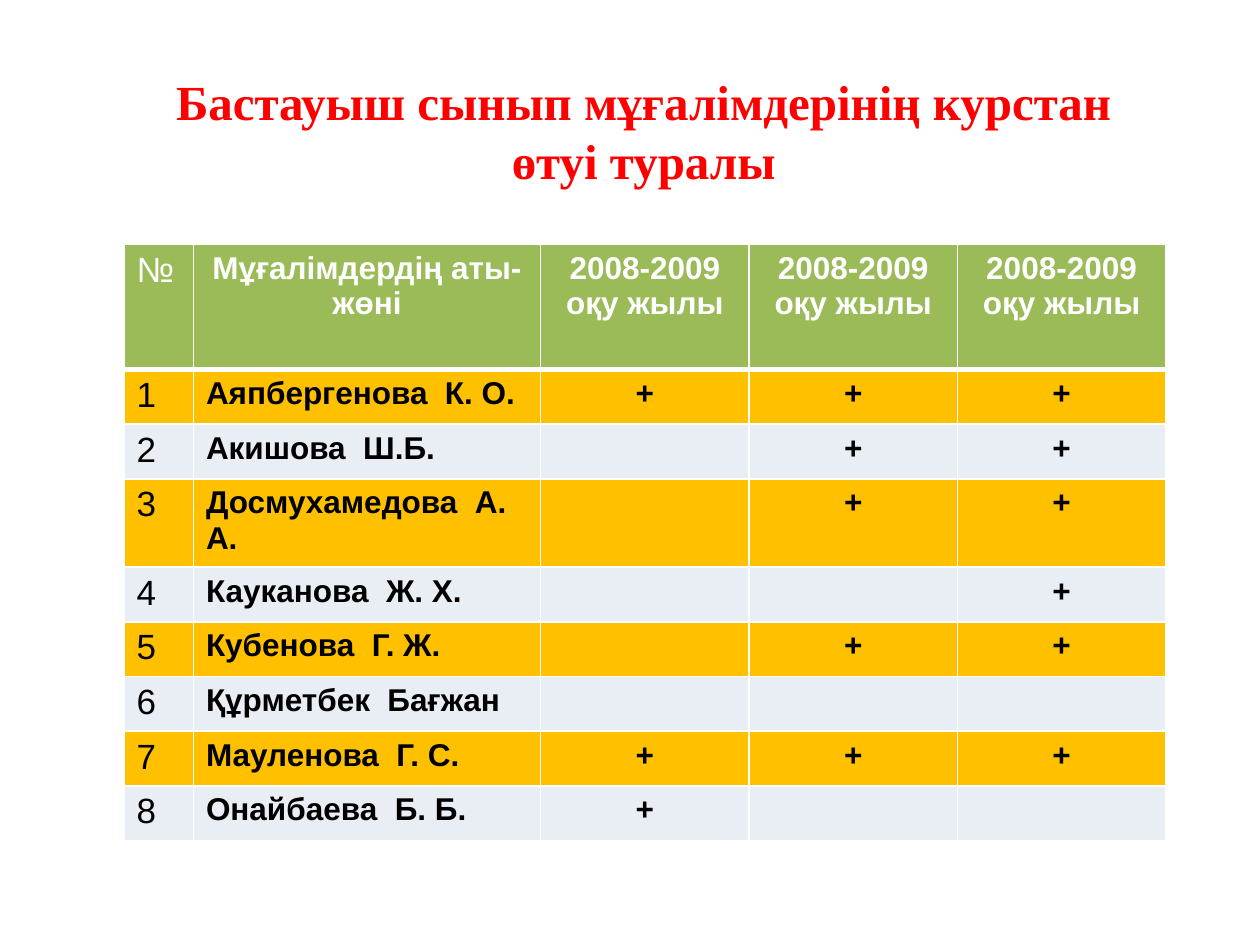
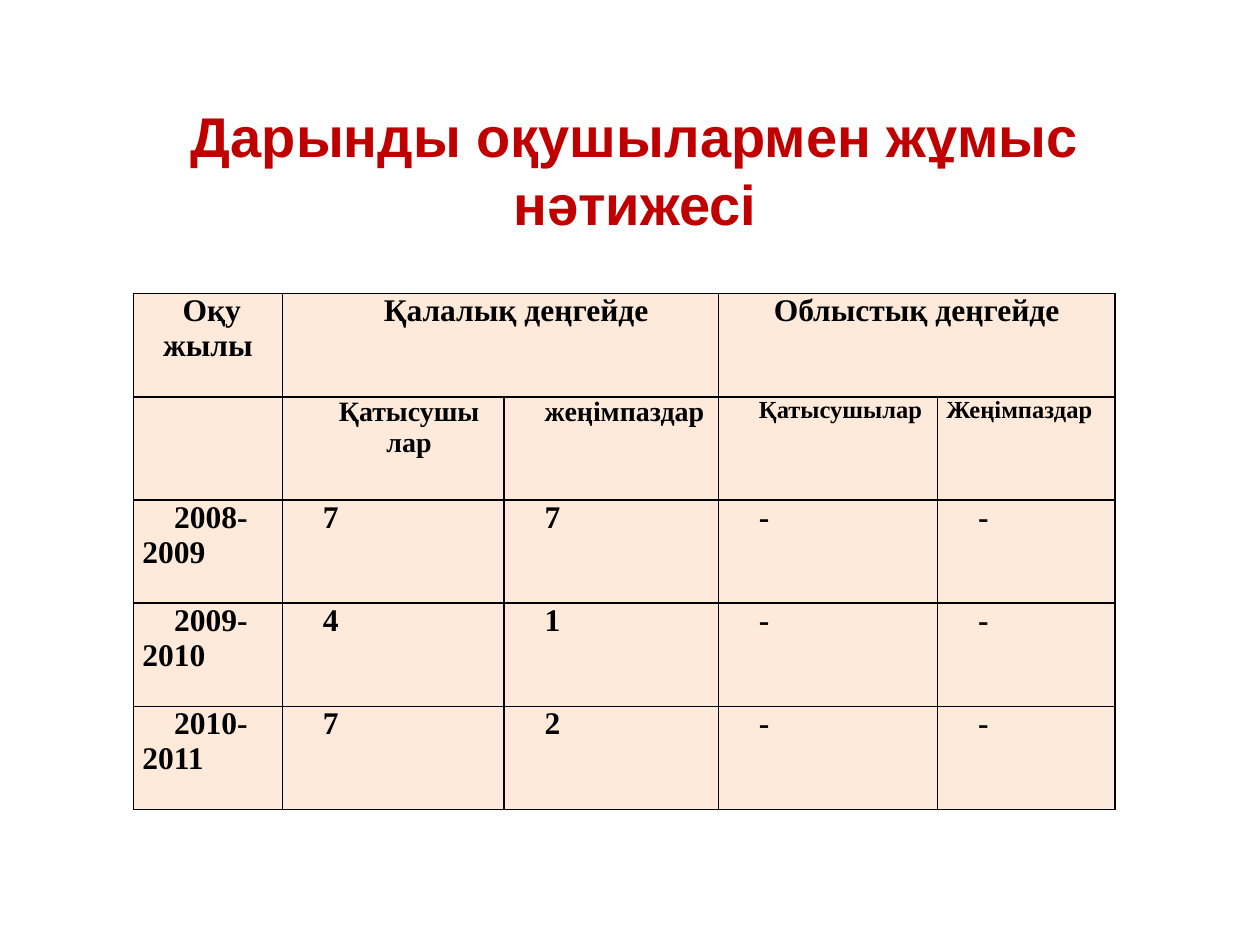
from lxml import etree
from pptx import Presentation
from pptx import util as u
from pptx.dml.color import RGBColor
from pptx.enum import text
from pptx.oxml.ns import qn

COLORS = {
    "red": "FF0000", "dark_red": "C00000", "white": "FFFFFF", "black": "000000",
    "green": "9BBB59", "amber": "FFC000", "pale_blue": "E9EDF4", "peach": "FDEADA",
}
SANS, SERIF = "Arial", "Times New Roman"
LEFT, CENTER, JUSTIFY = (text.PP_ALIGN.LEFT, text.PP_ALIGN.CENTER,
                         text.PP_ALIGN.JUSTIFY)

TEACHERS = [  # name, courses attended in each of the three years
    ("Аяпбергенова  К. О.", "+", "+", "+"),
    ("Акишова  Ш.Б.", "", "+", "+"),
    ("Досмухамедова  А. А.", "", "+", "+"),
    ("Кауканова  Ж. Х.", "", "", "+"),
    ("Кубенова  Г. Ж.", "", "+", "+"),
    ("Құрметбек  Бағжан", "", "", ""),
    ("Мауленова  Г. С.", "+", "+", "+"),
    ("Онайбаева  Б. Б.", "+", "", ""),
]
RESULTS = [
    ("2008-2009", "7", "7", "-", "-"),
    ("2009-2010", "4", "1", "-", "-"),
    ("2010-2011", "7", "2", "-", "-"),
]


def rgb(name):
    return RGBColor.from_string(COLORS[name])


def write(tf, content, size, font, color, bold=True, align=CENTER, indent=0):
    """Fill a text frame; each line of content becomes a paragraph."""
    tf.text = content
    for p in tf.paragraphs:
        p.alignment = align
        if indent:
            p._p.get_or_add_pPr().set("indent", str(u.Cm(indent)))
        for r in p.runs:
            r.font.size, r.font.name, r.font.bold = u.Pt(size), font, bold
            r.font.color.rgb = rgb(color)


def add_title(s, box, content, size, font, color):
    tf = s.shapes.add_textbox(*map(u.Cm, box)).text_frame
    tf.word_wrap = True
    write(tf, content, size, font, color)


def add_grid(s, left, top, widths, heights):
    """Add an unstyled table with the given column widths and row heights."""
    size = map(u.Cm, (left, top, sum(widths), sum(heights)))
    table = s.shapes.add_table(len(heights), len(widths), *size).table
    table.first_row = table.horz_banding = False
    for col, width in zip(table.columns, widths):
        col.width = u.Cm(width)
    for row, height in zip(table.rows, heights):
        row.height = u.Cm(height)
    return table


def style_cell(cell, fill, line, top=1, bottom=1):
    """Draw the four borders of a cell, then its fill."""
    tcPr = cell._tc.get_or_add_tcPr()
    for side, width in zip("LRTB", (1, 1, top, bottom)):
        ln = etree.SubElement(tcPr, qn(f"a:ln{side}"), w=str(u.Pt(width)))
        solid = etree.SubElement(ln, qn("a:solidFill"))
        etree.SubElement(solid, qn("a:srgbClr"), val=COLORS[line])
    cell.fill.solid()
    cell.fill.fore_color.rgb = rgb(fill)


def add_courses_slide(prs):
    s = prs.slides.add_slide(prs.slide_layouts[6])
    add_title(s, (1.9, 1.32, 22.4, 3.84),
              "Бастауыш сынып мұғалімдерінің курстан \nөтуі туралы ",
              28, SERIF, "red")

    # Header, numbered teachers; the longest name takes two lines
    header = ("№", "Мұғалімдердің аты-жөні") + ("2008-2009\nоқу жылы",) * 3
    rows = [header] + [(str(i), *t) for i, t in enumerate(TEACHERS, 1)]
    heights = [2.52] + [1.1] * len(TEACHERS)
    heights[3] = 1.78
    table = add_grid(s, 2.5, 4.93, [1.4, 7] + [4.2] * 3, heights)

    for i, row in enumerate(rows):
        fill = "green" if i == 0 else "amber" if i % 2 else "pale_blue"
        for j, content in enumerate(row):
            cell = table.cell(i, j)
            style_cell(cell, fill, "white", top=3 if i == 1 else 1,
                       bottom=3 if i == 0 else 1)
            write(cell.text_frame, content, 18 if j else 20, SANS,
                  "black" if i else "white", bold=j > 0,
                  align=LEFT if j == 0 or (i and j == 1) else CENTER)


def add_results_slide(prs):
    s = prs.slides.add_slide(prs.slide_layouts[6])
    table = add_grid(s, 2.69, 5.92, [3, 4.47, 4.32, 4.42, 3.58], [2.08] * 5)
    for cell in table.iter_cells():
        style_cell(cell, "peach", "black")
        cell.margin_left = cell.margin_right = u.Cm(0.18)
        cell.margin_top = cell.margin_bottom = 0
    for col in (1, 3):
        table.cell(0, col).merge(table.cell(0, col + 1))

    # Two header rows: column, text, size, alignment, first-line indent
    indent = 0.64
    headers = [
        [(0, " Оқу жылы", 18, CENTER, 0),
         (1, "Қалалық деңгейде", 18, CENTER, indent),
         (3, "Облыстық деңгейде", 18, CENTER, 0)],
        [(1, "Қатысушы\nлар", 16, CENTER, indent),
         (2, "жеңімпаздар", 16, JUSTIFY, indent),
         (3, "Қатысушылар", 14, JUSTIFY, indent),
         (4, "Жеңімпаздар", 14, JUSTIFY, 0)],
    ]
    body = [[(j, value, 18, JUSTIFY, indent) for j, value in enumerate(row)]
            for row in RESULTS]
    for i, row in enumerate(headers + body):
        for j, content, size, align, first in row:
            write(table.cell(i, j).text_frame, content, size, SERIF, "black",
                  align=align, indent=first)

    add_title(s, (2.1, 1.93, 21.4, 3), "Дарынды оқушылармен жұмыс нәтижесі",
              32, SANS, "dark_red")


def main():
    prs = Presentation()
    prs.slide_width, prs.slide_height = u.Cm(25.4), u.Cm(19.05)
    add_courses_slide(prs)
    add_results_slide(prs)
    prs.save("out.pptx")


if __name__ == "__main__":
    main()
